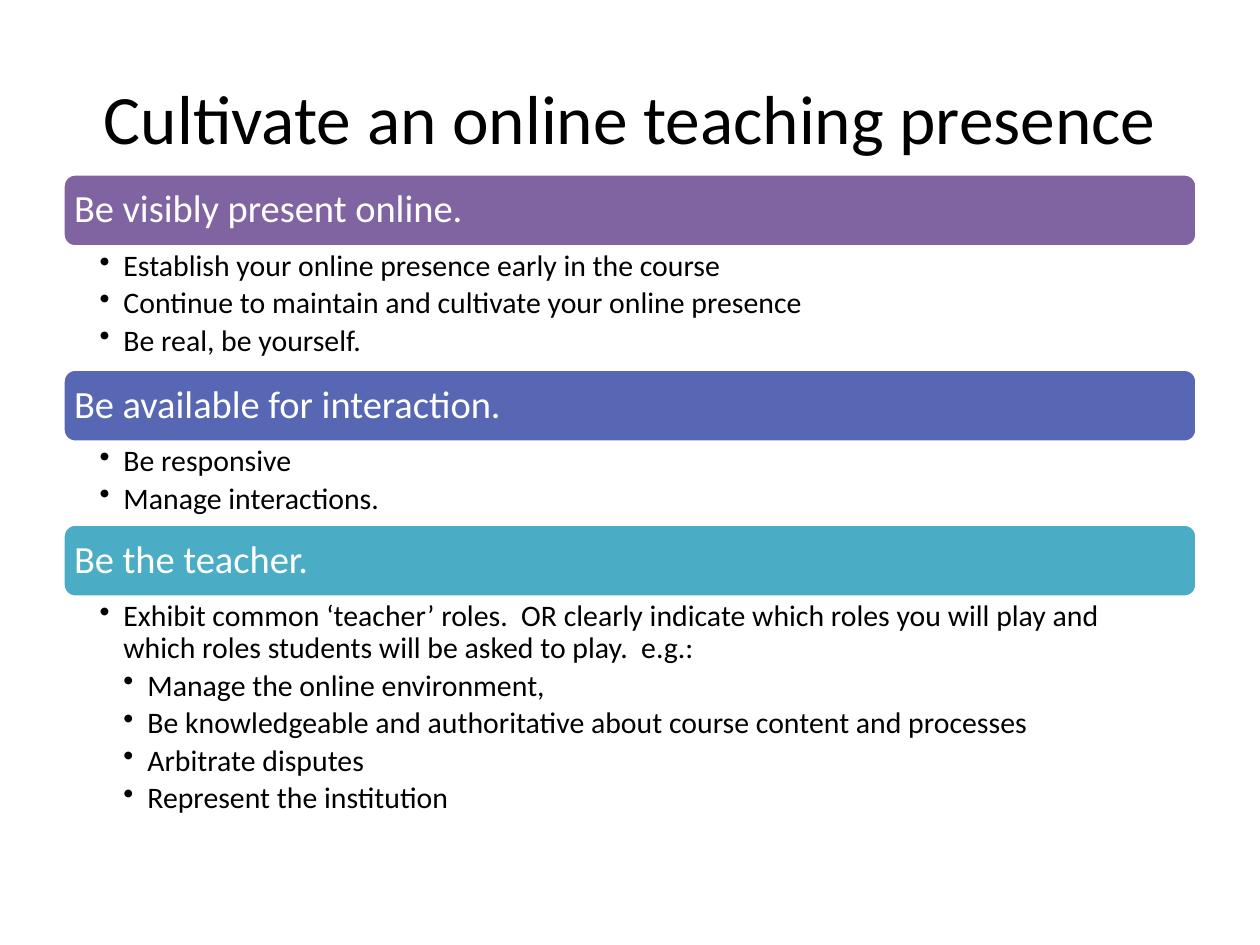
"""Build the slide on cultivating an online teaching presence."""
from dataclasses import dataclass

from lxml import etree
from pptx import Presentation
from pptx.dml.color import RGBColor
from pptx.enum.shapes import MSO_SHAPE
from pptx.enum.text import MSO_ANCHOR, PP_ALIGN
from pptx.oxml.ns import qn
from pptx.util import Inches, Pt

ROUNDED = MSO_SHAPE.ROUNDED_RECTANGLE
TOP, MIDDLE = MSO_ANCHOR.TOP, MSO_ANCHOR.MIDDLE
LEFT, CENTER = PP_ALIGN.LEFT, PP_ALIGN.CENTER
FONT = "Calibri"
BLACK, WHITE = "000000", "FFFFFF"
MARGIN, CONTENT_WIDTH = 0.5, 9
FIRST_TOP, HEADING_HEIGHT = 1.38, 0.58
INDENT = 0.19


@dataclass(frozen=True)
class Section:
    heading: str
    color: str
    body_height: float
    bullets: tuple[tuple[int, str], ...]


SECTIONS = (
    Section("Be visibly present online.", "8064A2", 0.97, (
        (1, "Establish your online presence early in the course"),
        (1, "Continue to maintain and cultivate your online presence"),
        (1, "Be real, be yourself."),
    )),
    Section("Be available for interaction.", "5767B4", 0.65, (
        (1, "Be responsive"),
        (1, "Manage interactions."),
    )),
    Section("Be the teacher.", "4BACC6", 1.89, (
        (1, "Exhibit common ‘teacher’ roles.  OR clearly indicate which roles you will play "
            "and which roles students will be asked to play.  e.g.:"),
        (2, "Manage the online environment,"),
        (2, "Be knowledgeable and authoritative about course content and processes"),
        (2, "Arbitrate disputes"),
        (2, "Represent the institution"),
    )),
)


def rgb(color: str) -> RGBColor:
    return RGBColor.from_string(color)


def set_frame(text_frame, anchor, left: float, right: float, vertical: float) -> None:
    text_frame.word_wrap = True
    text_frame.vertical_anchor = anchor
    text_frame.margin_left, text_frame.margin_right = Inches(left), Inches(right)
    text_frame.margin_top = text_frame.margin_bottom = Inches(vertical)


def format_paragraph(paragraph, size: float, color: str, alignment=LEFT) -> None:
    paragraph.alignment = alignment
    for run in paragraph.runs:
        run.font.name, run.font.size = FONT, Pt(size)
        run.font.color.rgb = rgb(color)


def add_bullet(paragraph, level: int) -> None:
    paragraph.level = level
    paragraph.line_spacing = 0.9
    paragraph.space_after = Pt(3)
    properties = paragraph._p.get_or_add_pPr()
    properties.set("marL", str(Inches(INDENT * level)))
    properties.set("indent", str(-Inches(INDENT)))
    etree.SubElement(properties, qn("a:buChar")).set("char", "•")


def add_title(slide, text: str) -> None:
    box = slide.shapes.add_textbox(
        Inches(MARGIN), Inches(0.3), Inches(CONTENT_WIDTH), Inches(1.25))
    set_frame(box.text_frame, MIDDLE, 0.1, 0.1, 0.05)
    box.text_frame.text = text
    format_paragraph(box.text_frame.paragraphs[0], 39.6, BLACK, CENTER)


def add_heading(slide, section: Section, top: float) -> None:
    bar = slide.shapes.add_shape(
        ROUNDED, Inches(MARGIN), Inches(top), Inches(CONTENT_WIDTH), Inches(HEADING_HEIGHT))
    bar.shadow.inherit = False
    bar.fill.solid()
    bar.fill.fore_color.rgb = rgb(section.color)
    bar.line.color.rgb = rgb(WHITE)
    bar.line.width = Pt(2)
    set_frame(bar.text_frame, MIDDLE, 0.06, 0.06, 0.06)
    bar.text_frame.text = section.heading
    paragraph = bar.text_frame.paragraphs[0]
    paragraph.line_spacing = 0.9
    format_paragraph(paragraph, 22, WHITE)


def add_body(slide, section: Section, top: float) -> None:
    box = slide.shapes.add_textbox(
        Inches(MARGIN), Inches(top), Inches(CONTENT_WIDTH), Inches(section.body_height))
    set_frame(box.text_frame, TOP, 0.29, 0.17, 0.03)
    box.text_frame.text = "\n".join(text for _, text in section.bullets)
    for paragraph, (level, _) in zip(box.text_frame.paragraphs, section.bullets):
        add_bullet(paragraph, level)
        format_paragraph(paragraph, 17, BLACK)


def main() -> None:
    presentation = Presentation()
    presentation.slide_width, presentation.slide_height = Inches(10), Inches(7.5)
    slide = presentation.slides.add_slide(presentation.slide_layouts[6])
    add_title(slide, "Cultivate an online teaching presence")
    top = FIRST_TOP
    for section in SECTIONS:
        add_heading(slide, section, top)
        add_body(slide, section, top + HEADING_HEIGHT)
        top += HEADING_HEIGHT + section.body_height
    presentation.save("out.pptx")


if __name__ == "__main__":
    main()
